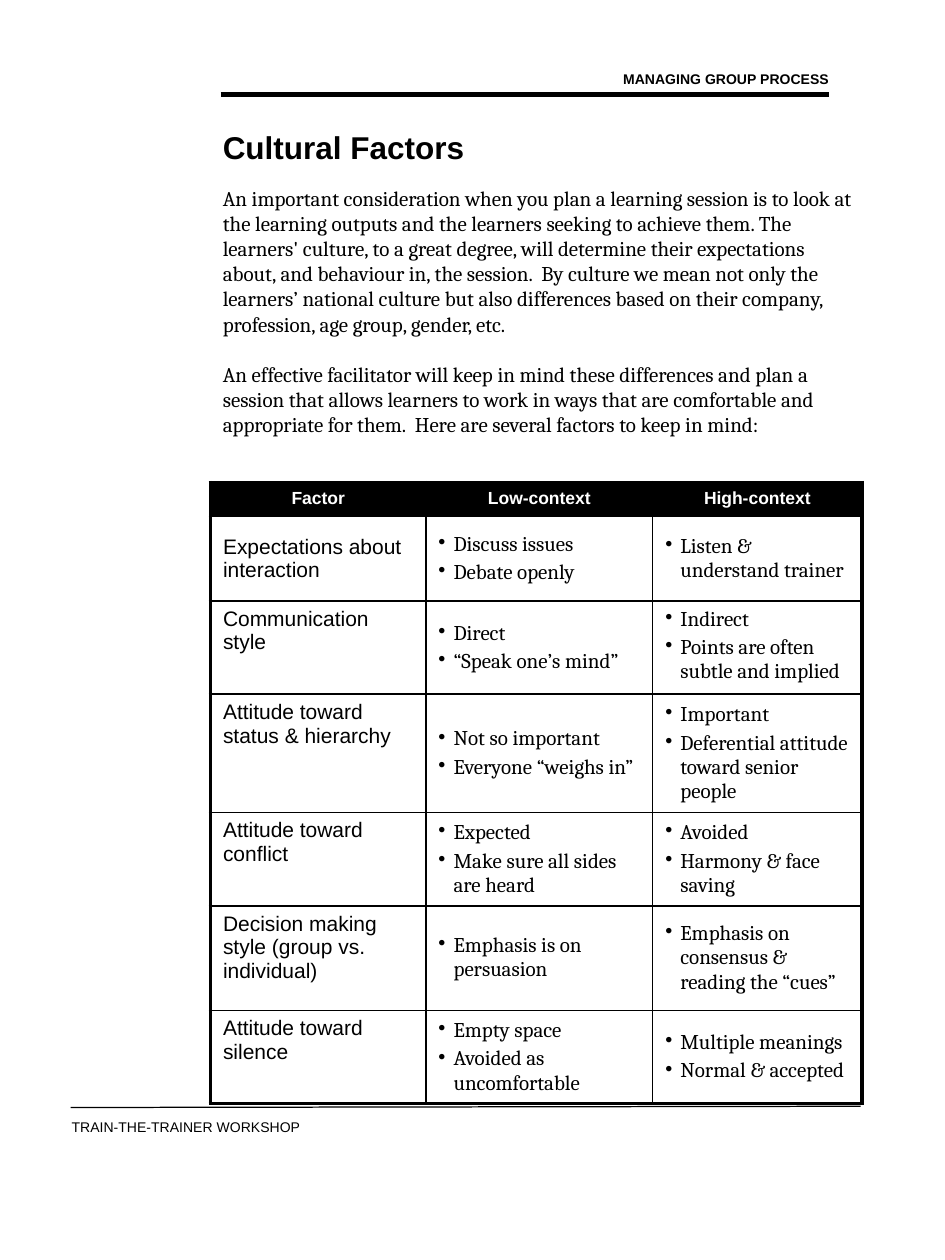
from lxml import etree
from pptx import Presentation
from pptx.dml.color import RGBColor
from pptx.enum.shapes import MSO_CONNECTOR
from pptx.enum.text import MSO_ANCHOR, PP_ALIGN
from pptx.oxml.ns import qn
from pptx.util import Inches, Pt

LINE = MSO_CONNECTOR.STRAIGHT
TOP, MID = MSO_ANCHOR.TOP, MSO_ANCHOR.MIDDLE
LEFT, MIDDLE, RIGHT = PP_ALIGN.LEFT, PP_ALIGN.CENTER, PP_ALIGN.RIGHT
HUES = {"ink": "000000", "paper": "FFFFFF"}
FONTS = {
    "note": {"name": "Arial", "size": Pt(8), "bold": False},
    "head": {"name": "Arial", "size": Pt(8), "bold": True},
    "title": {"name": "Arial", "size": Pt(18), "bold": True},
    "body": {"name": "Cambria", "size": Pt(12), "bold": False},
    "top": {"name": "Arial", "size": Pt(10), "bold": True},
    "factor": {"name": "Arial", "size": Pt(12), "bold": False},
}
THIN, THICK = 1, 2.25
INDENT = Inches(0.12)
COLS = [1.71, 1.8, 1.66]
ROWS = [0.27, 0.67, 0.74, 0.94, 0.74, 0.83, 0.74]
HEADS = ["Factor", "Low-context", "High-context"]
FACTORS = [
    ("Expectations about interaction",
     ["Discuss issues", "Debate openly"],
     ["Listen & understand trainer"]),
    ("Communication style",
     ["Direct", "“Speak one’s mind”"],
     ["Indirect", "Points are often subtle and implied"]),
    ("Attitude toward status & hierarchy",
     ["Not so important", "Everyone “weighs in”"],
     ["Important", "Deferential attitude toward senior people"]),
    ("Attitude toward conflict",
     ["Expected", "Make sure all sides are heard"],
     ["Avoided", "Harmony & face saving"]),
    ("Decision making style (group vs. individual)",
     ["Emphasis is on persuasion"],
     ["Emphasis on consensus & reading the “cues”"]),
    ("Attitude toward silence",
     ["Empty space", "Avoided as uncomfortable"],
     ["Multiple meanings", "Normal & accepted"]),
]
BODY = [
    "An important consideration when you plan a learning session is to look at "
    "the learning outputs and the learners seeking to achieve them. The "
    "learners' culture, to a great degree, will determine their expectations "
    "about, and behaviour in, the session.  By culture we mean not only the "
    "learners’ national culture but also differences based on their company, "
    "profession, age group, gender, etc.",
    "An effective facilitator will keep in mind these differences and plan a "
    "session that allows learners to work in ways that are comfortable and "
    "appropriate for them.  Here are several factors to keep in mind:",
]


def fill_text(frame, lines, style, align=LEFT, gap=0, hue="ink", dots=False):
    """Write the lines as paragraphs of one style."""
    for i, line in enumerate(lines):
        para = frame.paragraphs[0] if i == 0 else frame.add_paragraph()
        para.alignment = align
        if i:
            para.space_before = Pt(gap)
        if dots:
            props = para._p.get_or_add_pPr()
            props.set("marL", str(INDENT))
            props.set("indent", str(-INDENT))
            etree.SubElement(props, qn("a:buChar")).set("char", "•")
        run = para.add_run()
        run.text = line
        for key, value in FONTS[style].items():
            setattr(run.font, key, value)
        run.font.color.rgb = RGBColor.from_string(HUES[hue])


def add_text(slide, box, lines, style, align=LEFT, gap=0, anchor=TOP):
    """Add a wrapped text box."""
    frame = slide.shapes.add_textbox(*map(Inches, box)).text_frame
    frame.word_wrap = True
    frame.vertical_anchor = anchor
    fill_text(frame, lines, style, align, gap)


def add_rule(slide, ends, width):
    """Draw a plain line between two points."""
    rule = slide.shapes.add_connector(LINE, *map(Inches, ends))
    rule.line.width = Pt(width)
    rule.line.color.rgb = RGBColor.from_string(HUES["ink"])
    etree.SubElement(rule._element.spPr, qn("a:effectLst"))


def add_edges(cell, widths):
    """Give the cell its left, right, top and bottom borders."""
    props = cell._tc.get_or_add_tcPr()
    for side, width in zip("LRTB", widths):
        edge = etree.SubElement(props, qn(f"a:ln{side}"), w=str(Pt(width)))
        fill = etree.SubElement(edge, qn("a:solidFill"))
        etree.SubElement(fill, qn("a:srgbClr"), val=HUES["ink"])


def add_header(slide, box):
    """Place the running head over its thick rule."""
    left, top, width, height = box
    add_text(slide, (left + 2.6, top, 2.33, 0.23),
             ["MANAGING GROUP PROCESS"], "head", RIGHT)
    base = top + height
    add_rule(slide, (left, base, left + width, base), 3)


def add_intro(slide, box):
    """Place the title and the text below it."""
    left, top, width, height = box
    add_text(slide, (left, top, 5, 0.5), ["Cultural Factors"], "title", anchor=MID)
    add_text(slide, (left, top + 0.5, width, height - 0.5), BODY, "body", gap=14.4)


def add_grid(slide, box):
    """Build the table of factors."""
    grid = slide.shapes.add_table(len(ROWS), len(COLS), *map(Inches, box)).table
    grid.first_row = grid.horz_banding = False
    for col, width in zip(grid.columns, COLS):
        col.width = Inches(width)
    for row, height in zip(grid.rows, ROWS):
        row.height = Inches(height)
    for r, items in enumerate([HEADS, *FACTORS]):
        for c, item in enumerate(items):
            cell = grid.cell(r, c)
            outer = (c == 0, c == len(COLS) - 1, r == 0, r == len(ROWS) - 1)
            add_edges(cell, [THICK if edge else THIN for edge in outer])
            cell.fill.solid()
            cell.fill.fore_color.rgb = RGBColor.from_string(HUES["paper" if r else "ink"])
            high = r == 0 or (r > 1 and c == 0) or (r, c) == (2, 2)
            cell.vertical_anchor = TOP if high else MID
            if r == 0:
                fill_text(cell.text_frame, [item], "top", MIDDLE, hue="paper")
            elif c == 0:
                fill_text(cell.text_frame, [item], "factor")
            else:
                fill_text(cell.text_frame, item, "body", gap=2.4, dots=True)


def add_footer(slide, box):
    """Place the thin rule and the workshop name."""
    left, top, width, height = box
    add_rule(slide, (left + 0.09, top, left + width, top - 0.01), 0.7)
    add_text(slide, (left, top + 0.04, 3.5, height), ["TRAIN-THE-TRAINER WORKSHOP"], "note")


def main():
    """Build the page and save it."""
    deck = Presentation()
    deck.slide_width, deck.slide_height = Inches(7.5), Inches(10)
    slide = deck.slides.add_slide(deck.slide_layouts[6])
    add_footer(slide, (0.47, 8.79, 6.36, 0.23))
    add_header(slide, (1.75, 0.51, 4.83, 0.24))
    add_intro(slide, (1.67, 0.92, 5.25, 2.62))
    add_grid(slide, (1.67, 3.83, sum(COLS), sum(ROWS)))
    deck.save("out.pptx")


if __name__ == "__main__":
    main()
